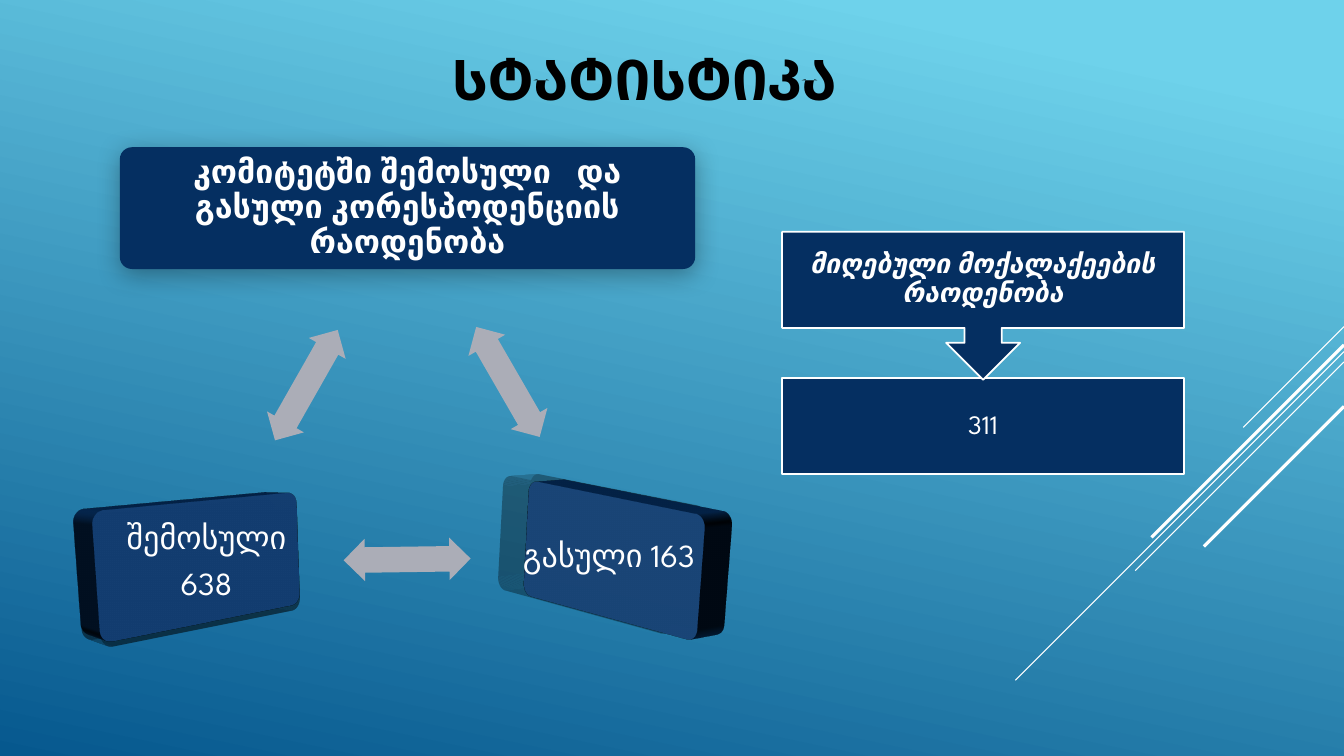
import pptx
import pptx.dml.color
import pptx.enum.shapes
import pptx.enum.text
import pptx.oxml
import pptx.oxml.ns
import pptx.util
from dataclasses import dataclass

Cm = pptx.util.Cm
Pt = pptx.util.Pt
Color = pptx.dml.color.RGBColor.from_string
Shape = pptx.enum.shapes.MSO_SHAPE
Anchor = pptx.enum.text.MSO_ANCHOR
Align = pptx.enum.text.PP_ALIGN
namespace = pptx.oxml.ns.nsdecls("a")


@dataclass
class Theme:
    font: str = "League Spartan"
    sky: str = "6ED2EB"
    sea: str = "06588E"
    navy: str = "052F61"
    silver: str = "ABADB7"
    white: str = "FFFFFF"
    black: str = "000000"
    title: int = 40
    card: int = 23
    visitor: int = 19


theme = Theme()


def add_figure(kind, place, color, rotation=0, outlined=False):
    figure = page.shapes.add_shape(kind, *[Cm(length) for length in place])
    figure.shadow.inherit = False
    figure.fill.solid()
    figure.fill.fore_color.rgb = Color(color)
    figure.rotation = rotation
    if outlined:
        figure.line.color.rgb = Color(theme.white)
        figure.line.width = Pt(1.25)
    else:
        figure.line.fill.background()
    return figure


def write(box, lines, size, color, inset, anchor=Anchor.MIDDLE, bold=False, italic=False):
    frame = box.text_frame
    frame.word_wrap = True
    frame.auto_size = pptx.enum.text.MSO_AUTO_SIZE.NONE
    frame.vertical_anchor = anchor
    frame.margin_left = frame.margin_right = Cm(inset)
    frame.margin_top = frame.margin_bottom = Cm(inset)
    for number, line in enumerate(lines):
        para = frame.add_paragraph() if number else frame.paragraphs[0]
        para.alignment = Align.CENTER
        para.line_spacing = 0.9
        para.space_after = Pt(size * 0.35)
        span = para.add_run()
        span.text = line
        span.font.name = theme.font
        span.font.size = Pt(size)
        span.font.bold = bold
        span.font.italic = italic
        span.font.color.rgb = Color(color)


deck = pptx.Presentation()
deck.slide_width = Cm(33.87)
deck.slide_height = Cm(19.05)
page = deck.slides.add_slide(deck.slide_layouts[5])

backdrop = page.background.fill
backdrop.gradient()
backdrop.gradient_angle = 258
for stop, position, color in zip(backdrop.gradient_stops, (0.1, 1), (theme.sky, theme.sea)):
    stop.position = position
    stop.color.rgb = Color(color)

for top, run, weight in [(8.23, 2.54, 0.75), (8.86, 8.28, 0.75), (9.12, 5.26, 0.75),
                         (8.69, 4.85, 2.25), (10.24, 3.53, 2.25)]:
    ray = page.shapes.add_connector(
        pptx.enum.shapes.MSO_CONNECTOR.STRAIGHT,
        Cm(33.87), Cm(top), Cm(33.87 - run), Cm(top + run))
    ray.line.color.rgb = Color(theme.white)
    ray.line.width = Pt(weight)
    ray._element.spPr.append(pptx.oxml.parse_xml(f"<a:effectLst {namespace}/>"))

title = page.shapes.title
title.left, title.top, title.width, title.height = Cm(2.64), Cm(0.66), Cm(27.2), Cm(2.31)
write(title, ["ᲡᲢᲐᲢᲘᲡᲢᲘᲙᲐ"], theme.title, theme.black, 0.13, Anchor.BOTTOM, bold=True)

soft = (17.8, 4, 87, 33)
cast = (14.5, 19, 192, 18)
cards = [
    ((3.02, 3.71, 14.5, 3.07), ["კომიტეტში შემოსული   და გასული კორესპოდენციის რაოდენობა"],
     True, soft, None),
    ((12.27, 12.5, 6.15, 3.07), ["გასული 163"], False, cast, "perspectiveContrastingLeftFacing"),
    ((2.13, 12.62, 6.15, 3.07), ["შემოსული", "638"], False, soft,
     "perspectiveHeroicExtremeRightFacing"),
]
for place, lines, bold, (blur, distance, angle, opacity), camera in cards:
    card = add_figure(Shape.ROUNDED_RECTANGLE, place, theme.navy)
    card.adjustments[0] = 0.1
    properties = card._element.spPr
    properties.remove(properties.find(pptx.oxml.ns.qn("a:effectLst")))
    properties.append(pptx.oxml.parse_xml(
        f'<a:effectLst {namespace}><a:outerShdw blurRad="{Pt(blur)}" dist="{Pt(distance)}" '
        f'dir="{angle * 60000}" algn="ctr" rotWithShape="0"><a:srgbClr val="{theme.black}">'
        f'<a:alpha val="{opacity * 1000}"/></a:srgbClr></a:outerShdw></a:effectLst>'))
    if camera:
        properties.append(pptx.oxml.parse_xml(
            f'<a:scene3d {namespace}><a:camera prst="{camera}"/>'
            '<a:lightRig rig="threePt" dir="t"/></a:scene3d>'))
        properties.append(pptx.oxml.parse_xml(
            f'<a:sp3d {namespace} extrusionH="{Cm(1)}"/>'))
    left, top, width, height = place
    label = page.shapes.add_textbox(
        Cm(left + 0.09), Cm(top + 0.09), Cm(width - 0.18), Cm(height - 0.18))
    write(label, lines, theme.card, theme.white, 0.25, bold=bold)

for left, top, rotation in [(11.2, 9.09, 60), (8.66, 13.56, 179.2), (6.12, 9.17, 299.6)]:
    arrow = add_figure(Shape.LEFT_RIGHT_ARROW, (left, top, 3.2, 1.07), theme.silver, rotation)
    arrow.adjustments[0] = 0.6
    arrow.adjustments[1] = 0.5

visitors = [
    (Shape.RECTANGLE, 9.53, 2.41, 0, "311", False),
    (Shape.UP_ARROW_CALLOUT, 5.84, 3.73, 180, "მიღებული მოქალაქეების რაოდენობა", True),
]
for kind, top, height, rotation, line, strong in visitors:
    add_figure(kind, (19.71, top, 10.13, height), theme.navy, rotation, outlined=True)
    label = page.shapes.add_textbox(Cm(19.71), Cm(top), Cm(10.13), Cm(2.41))
    write(label, [line], theme.visitor, theme.white, 0.38, bold=strong, italic=strong)

deck.save("out.pptx")
